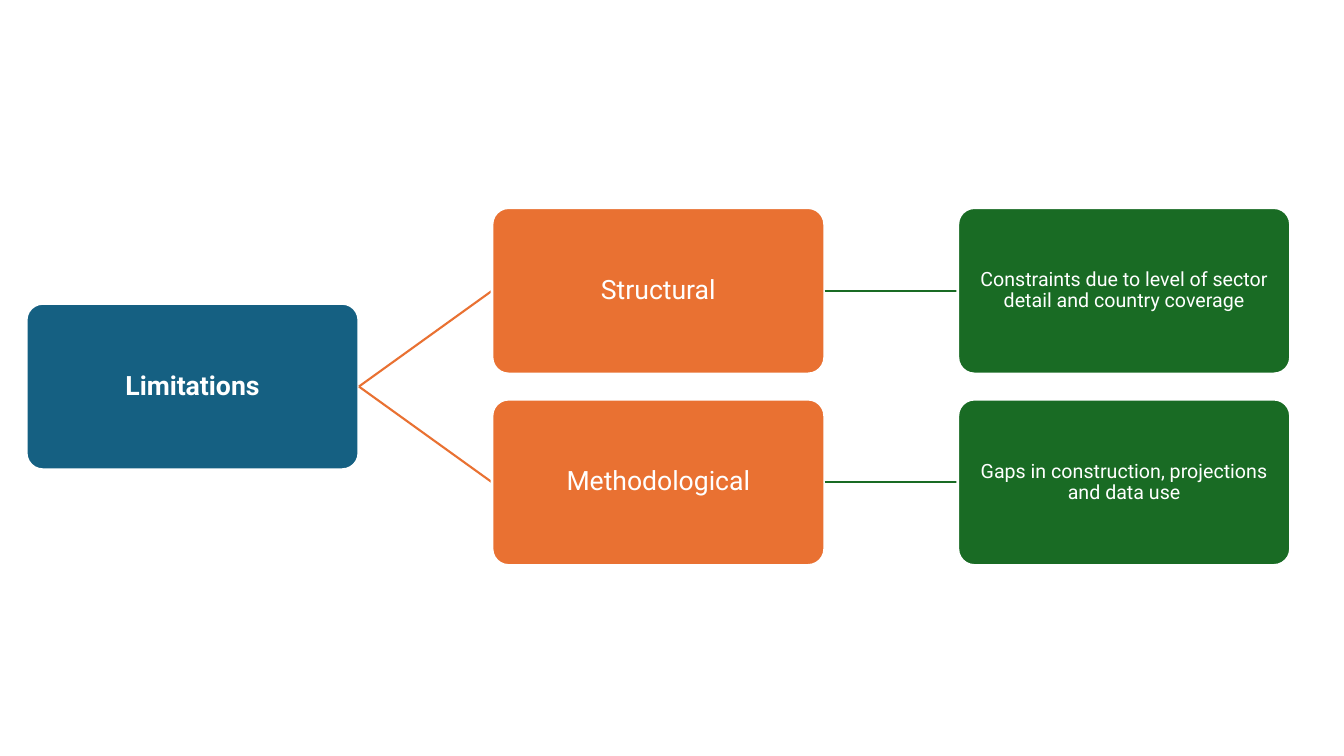
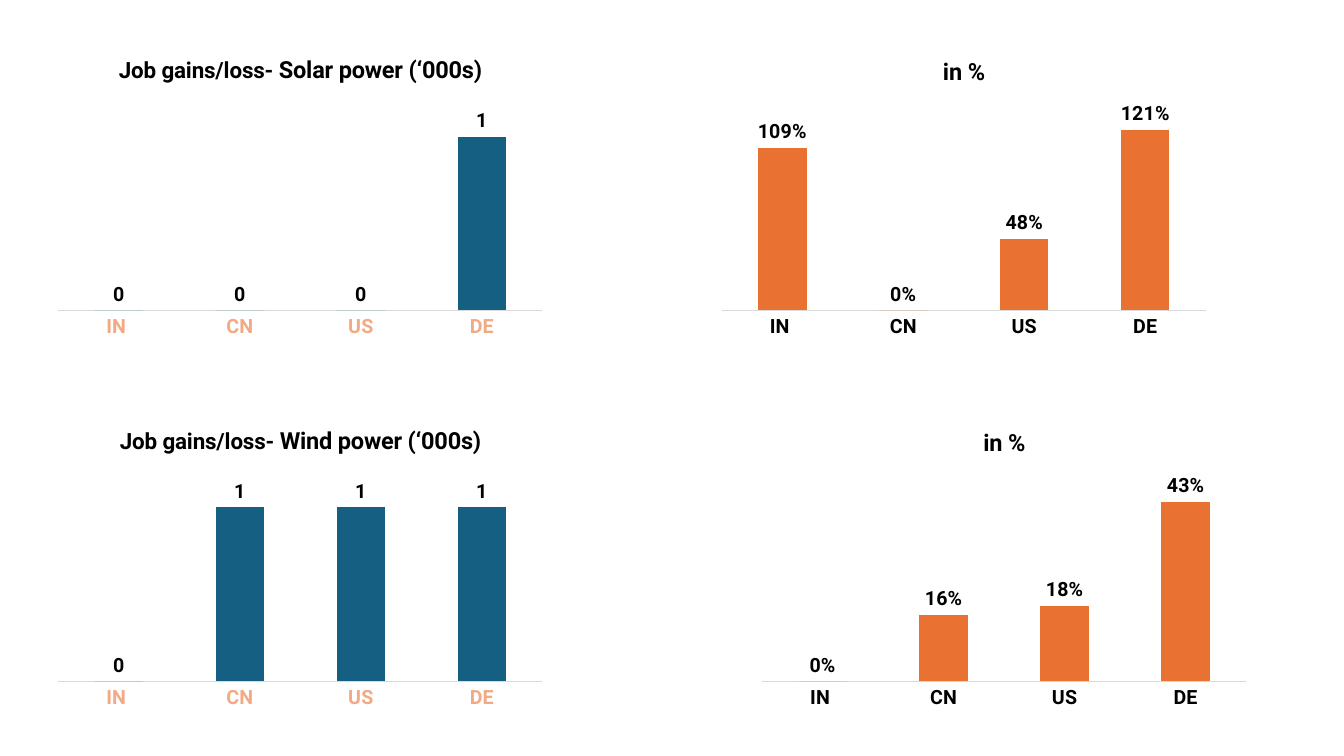
from lxml import etree
from pptx import Presentation
from pptx.chart.data import CategoryChartData
from pptx.dml.color import RGBColor
from pptx.enum.chart import XL_CHART_TYPE as ChartType, XL_LABEL_POSITION as LabelPosition
from pptx.enum.chart import XL_TICK_MARK as TickMark
from pptx.enum.shapes import MSO_CONNECTOR as Connector, MSO_SHAPE as Shape
from pptx.enum.text import MSO_ANCHOR as Anchor, PP_ALIGN as Align
from pptx.oxml import parse_xml
from pptx.oxml.ns import nsdecls, qn
from pptx.util import Inches, Pt

FONT = "Roboto"
COLORS = {
    "blue": "156082",
    "orange": "E97132",
    "green": "196B24",
    "peach": "F2AA84",
    "grey": "D9D9D9",
    "white": "FFFFFF",
    "black": "000000",
}
BOX_WIDTH, BOX_HEIGHT = 3.3, 1.65
COLUMN_STEP, ROW_STEP = 4.62, 1.9
BRANCHES = [
    ("Structural", "Constraints due to level of sector detail and country coverage"),
    ("Methodological", "Gaps in construction, projections and data use"),
]
COUNTRIES = ["IN ", "CN", "US", "DE"]
CHART_WIDTH, CHART_HEIGHT = 5, 3
JOB_STYLE = {"series": "Series 1", "bar": "blue", "axis": "peach", "number_format": "0"}
PERCENT_STYLE = {"series": "in %", "bar": "orange", "axis": "black", "number_format": "0%"}
PERCENT_TITLE = [("in %", 16.8)]


def job_title(source):
    """Return the title runs of a chart of job changes."""
    return [("Job gains/loss- ", 16), (f"{source} power (‘000s)", 16.8)]


CHARTS = [
    (0.48, 0.41, job_title("Solar"), (0, 0, 0, 1), 1.2, JOB_STYLE),
    (7.06, 0.41, PERCENT_TITLE, (1.09, 0, 0.48, 1.21), 1.4, PERCENT_STYLE),
    (0.48, 4.09, job_title("Wind"), (0, 1, 1, 1), 1.2, JOB_STYLE),
    (7.46, 4.09, PERCENT_TITLE, (0, 0.16, 0.18, 0.43), 0.5, PERCENT_STYLE),
]


def rgb(name):
    """Return the named colour."""
    return RGBColor.from_string(COLORS[name])


def style_font(font, size, color, bold=False):
    """Apply the shared typeface with a size, colour and weight."""
    font.name = FONT
    font.size = Pt(size)
    font.bold = bold
    font.color.rgb = rgb(color)


def add_box(slide, left, top, text, color, size, bold=False):
    """Add one rounded box of the tree."""
    box = slide.shapes.add_shape(
        Shape.ROUNDED_RECTANGLE, Inches(left), Inches(top), Inches(BOX_WIDTH), Inches(BOX_HEIGHT)
    )
    box.adjustments[0] = 0.1
    box.shadow.inherit = False
    box.fill.solid()
    box.fill.fore_color.rgb = rgb(color)
    box.line.color.rgb = rgb("white")
    box.line.width = Pt(2)
    frame = box.text_frame
    frame.word_wrap = True
    frame.vertical_anchor = Anchor.MIDDLE
    frame.margin_left = frame.margin_right = Inches(0.06)
    frame.margin_top = frame.margin_bottom = Inches(0.06)
    frame.text = text
    paragraph = frame.paragraphs[0]
    paragraph.alignment = Align.CENTER
    paragraph.line_spacing = 0.9
    style_font(paragraph.runs[0].font, size, "white", bold)
    return box


def add_child(slide, parent, left, top, text, color, size):
    """Add a box joined to its parent by a line in the box colour."""
    link = slide.shapes.add_connector(Connector.STRAIGHT, 0, 0, 0, 0)
    link.line.color.rgb = rgb(color)
    link.line.width = Pt(1.5)
    etree.SubElement(link._element.spPr, qn("a:effectLst"))
    child = add_box(slide, left, top, text, color, size)
    link.begin_connect(parent, 3)
    link.end_connect(child, 1)
    return child


def add_tree(slide, left, top):
    """Add the tree of limitations with its top left corner at the given place."""
    root_top = top + ROW_STEP * (len(BRANCHES) - 1) / 2
    root = add_box(slide, left, root_top, "Limitations", "blue", 19, bold=True)
    for row, (branch, detail) in enumerate(BRANCHES):
        row_top = top + row * ROW_STEP
        middle = add_child(slide, root, left + COLUMN_STEP, row_top, branch, "orange", 19)
        add_child(slide, middle, left + 2 * COLUMN_STEP, row_top, detail, "green", 14)


def set_plot_area(chart, x, y, width, height):
    """Fix the inner plot area as fractions of the chart."""
    plot_area = chart._chartSpace.chart.plotArea
    for layout in plot_area.findall(qn("c:layout")):
        plot_area.remove(layout)
    plot_area.insert(0, parse_xml(
        f'<c:layout {nsdecls("c")}><c:manualLayout><c:layoutTarget val="inner"/>'
        f'<c:xMode val="edge"/><c:yMode val="edge"/><c:x val="{x}"/><c:y val="{y}"/>'
        f'<c:w val="{width}"/><c:h val="{height}"/></c:manualLayout></c:layout>'
    ))


def add_column_chart(slide, left, top, title, values, maximum, style):
    """Add a titled column chart of the four countries."""
    data = CategoryChartData(number_format=style["number_format"])
    data.categories = COUNTRIES
    data.add_series(style["series"], values)
    chart = slide.shapes.add_chart(
        ChartType.COLUMN_CLUSTERED, Inches(left), Inches(top),
        Inches(CHART_WIDTH), Inches(CHART_HEIGHT), data,
    ).chart
    style_font(chart.font, 14, "black", bold=True)
    chart.has_legend = False
    chart.has_title = True
    paragraph = chart.chart_title.text_frame.paragraphs[0]
    for text, size in title:
        run = paragraph.add_run()
        run.text = text
        style_font(run.font, size, "black", bold=True)

    category_axis = chart.category_axis
    category_axis.major_tick_mark = category_axis.minor_tick_mark = TickMark.NONE
    category_axis.format.line.color.rgb = rgb("grey")
    category_axis.format.line.width = Pt(0.75)
    style_font(category_axis.tick_labels.font, 14, style["axis"], bold=True)
    value_axis = chart.value_axis
    value_axis.visible = False
    value_axis.has_major_gridlines = False
    value_axis.minimum_scale = 0
    value_axis.maximum_scale = maximum

    plot = chart.plots[0]
    plot.vary_by_categories = False
    plot.gap_width = 150
    plot.overlap = -25
    fill = plot.series[0].format.fill
    fill.solid()
    fill.fore_color.rgb = rgb(style["bar"])
    plot.has_data_labels = True
    labels = plot.data_labels
    labels.show_value = True
    labels.position = LabelPosition.OUTSIDE_END
    labels.number_format = style["number_format"]
    labels.number_format_is_linked = False
    style_font(labels.font, 14, "black", bold=True)
    set_plot_area(chart, 0.02, 0.2, 0.96, 0.69)


def main():
    """Build and save the presentation."""
    presentation = Presentation()
    presentation.slide_width = Inches(13.33)
    presentation.slide_height = Inches(7.5)
    blank = presentation.slide_layouts[6]
    add_tree(presentation.slides.add_slide(blank), 0.26, 2.06)
    chart_slide = presentation.slides.add_slide(blank)
    for chart in CHARTS:
        add_column_chart(chart_slide, *chart)
    presentation.save("out.pptx")


if __name__ == "__main__":
    main()
